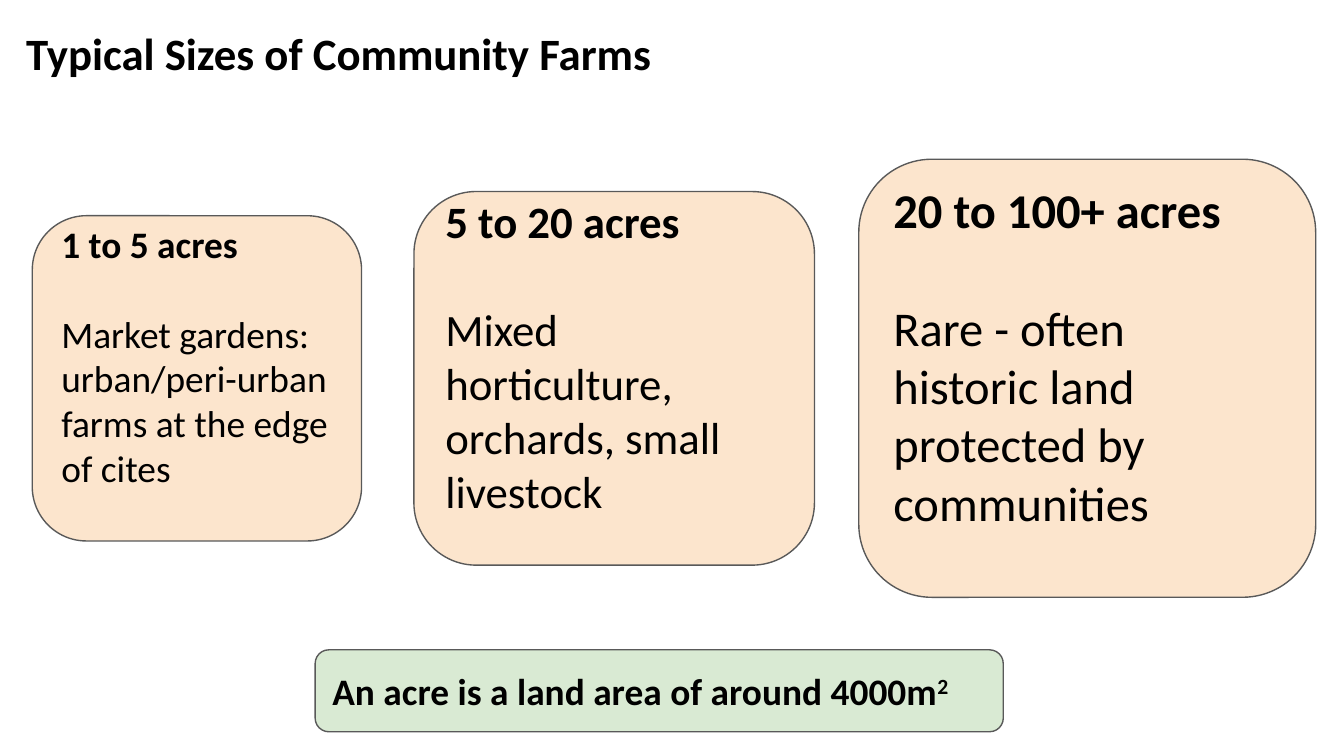
from pptx import Presentation
from pptx.dml.color import RGBColor
from pptx.enum.shapes import MSO_SHAPE as Shape
from pptx.enum.text import MSO_ANCHOR as Anchor, PP_ALIGN as Align
from pptx.util import Pt

PX = 4572  # 200 px to the inch
INSET = 20
BLANK_LINE = 68  # free line under the text of a size card
LINE_HEIGHT = 1.22

BLACK = RGBColor(0x00, 0x00, 0x00)
GREY = RGBColor(0x59, 0x59, 0x59)
PEACH = RGBColor(0xFC, 0xE5, 0xCD)
GREEN = RGBColor(0xD9, 0xEA, 0xD3)


def format_text(box, size, bottom=INSET):
    frame = box.text_frame
    frame.word_wrap = True
    frame.vertical_anchor = Anchor.MIDDLE
    frame.margin_left = frame.margin_top = frame.margin_right = INSET * PX
    frame.margin_bottom = bottom * PX
    for para in frame.paragraphs:
        para.alignment = Align.LEFT
        para.font.name = "Calibri"
        para.font.size = Pt(size)
        para.font.color.rgb = BLACK
    frame.paragraphs[0].font.bold = True


def add_card(page, left, top, width, height, fill):
    card = page.shapes.add_shape(
        Shape.ROUNDED_RECTANGLE, left * PX, top * PX, width * PX, height * PX)
    card.shadow.inherit = False
    card.fill.solid()
    card.fill.fore_color.rgb = fill
    card.line.color.rgb = GREY
    card.line.width = Pt(0.75)
    return card


deck = Presentation()
deck.slide_width, deck.slide_height = 2000 * PX, 1125 * PX
page = deck.slides.add_slide(deck.slide_layouts[5])

title = page.shapes.title
title.left, title.top, title.width, title.height = 19 * PX, 17 * PX, 1882 * PX, 122 * PX
title.text_frame.text = "Typical Sizes of Community Farms"
format_text(title, 24)

# The cards share one horizontal centre line
CENTRE = 563
sizes = [
    (48, 490, 484, 20, "1 to 5 acres",
     "Market gardens: urban/peri-urban farms at the edge of cites"),
    (616, 596, 556, 24, "5 to 20 acres",
     "Mixed horticulture, orchards, small livestock"),
    (1278, 680, 652, 26, "20 to 100+ acres",
     "Rare - often historic land protected by communities"),
]
for left, width, height, size, heading, detail in sizes:
    card = add_card(page, left, CENTRE - height // 2, width, height, PEACH)
    card.text_frame.text = f"{heading}\n{detail}"
    format_text(card, size, INSET + BLANK_LINE)
    card.text_frame.paragraphs[0].space_after = Pt(round(size * LINE_HEIGHT))

note = add_card(page, 469, 967, 1024, 122, GREEN)
note.text_frame.text = "An acre is a land area of around 4000m"
power = note.text_frame.paragraphs[0].add_run()
power.text = "2"
power.font._element.set("baseline", "30000")
format_text(note, 20)

deck.save("out.pptx")
